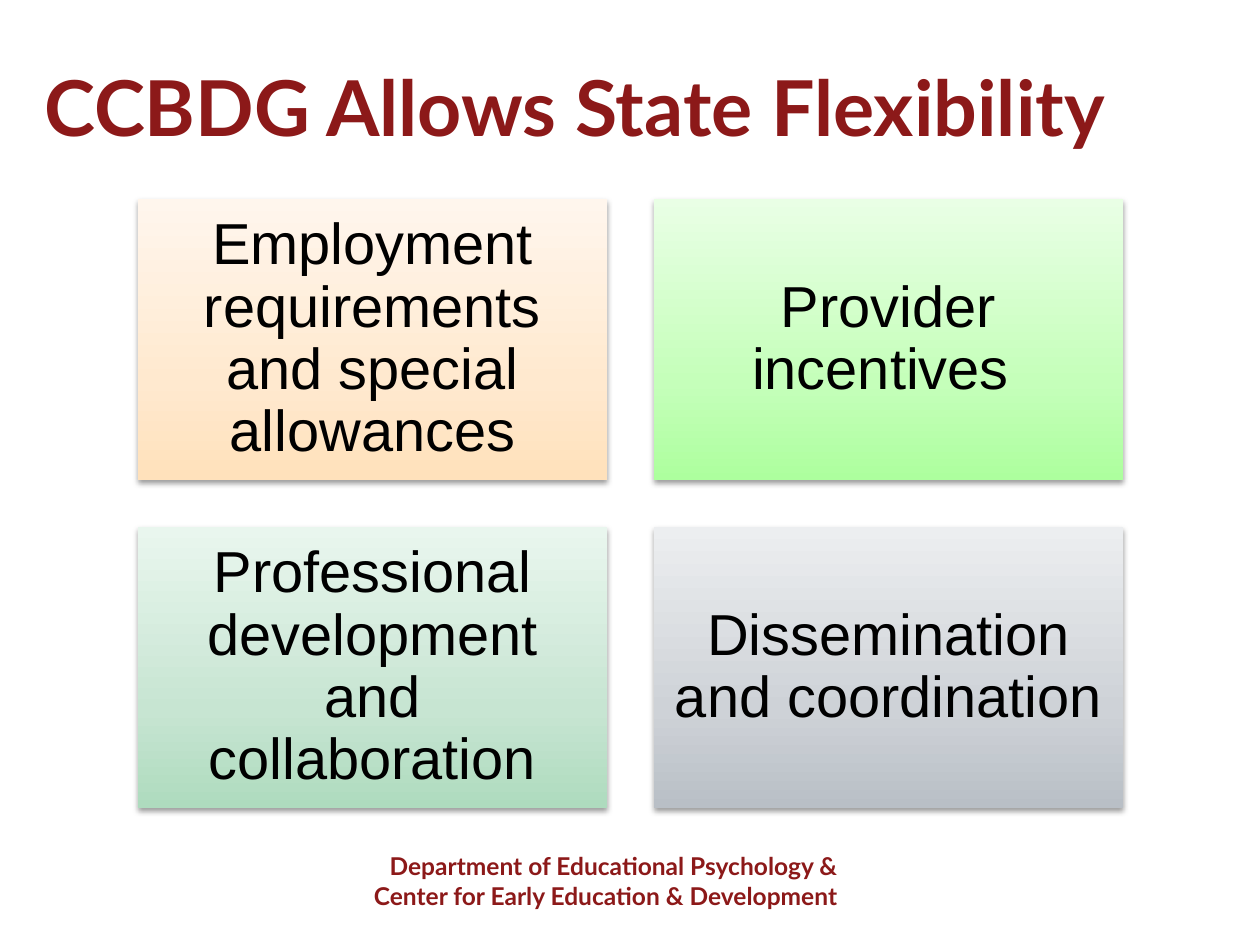
from dataclasses import dataclass

from lxml import etree
from pptx import Presentation
from pptx import util as u
from pptx.dml.color import RGBColor
from pptx.enum import shapes, text
from pptx.oxml import ns


@dataclass(frozen=True)
class Theme:
    """Colours, fonts and type sizes of the slide."""
    accent: str = "8C1919"
    ink: str = "000000"
    heading_font: str = "Lato"
    card_font: str = "Arial"
    title_size: int = 44
    card_size: int = 33
    footer_size: int = 14
    stops: tuple = (0, 35, 100)
    peach: tuple = ("FFE1BB", "FFE9CF", "FFF6ED")
    lime: tuple = ("ADFF9E", "C5FFBA", "E9FFE5")
    green: tuple = ("AEDBBE", "C7E5D2", "E9F6EE")
    grey: tuple = ("B9BFC6", "CED2D7", "ECEEF0")


THEME = Theme()
CARDS = (
    ("Employment requirements and special allowances", THEME.peach),
    ("Provider incentives ", THEME.lime),
    ("Professional development and collaboration", THEME.green),
    ("Dissemination and coordination", THEME.grey),
)


def px(length):
    """Turn pixels into EMU."""
    return u.Inches(length / 126)


def style(para, font, size, color, bold=False):
    """Format every run of a paragraph."""
    for span in para.runs:
        span.font.name = font
        span.font.size = u.Pt(size)
        span.font.bold = bold
        span.font.color.rgb = RGBColor.from_string(color)


def add_color(parent, tag, color, **attributes):
    """Append an element that holds one colour and return the colour."""
    holder = etree.SubElement(parent, ns.qn(tag), **attributes)
    return etree.SubElement(holder, ns.qn("a:srgbClr"), val=color)


def fill_gradient(shape, colors):
    """Fill a shape with a gradient that rises from bottom to top."""
    shape.fill.gradient()
    shape.fill.gradient_angle = 90
    stop_list = shape._element.spPr.find(".//" + ns.qn("a:gsLst"))
    for stop in list(stop_list):
        stop_list.remove(stop)
    for position, color in zip(THEME.stops, colors):
        add_color(stop_list, "a:gs", color, pos=str(position * 1000))


def add_shadow(shape):
    """Give a shape a soft shadow below it."""
    shape.shadow.inherit = False
    effects = shape._element.spPr.find(ns.qn("a:effectLst"))
    color = add_color(effects, "a:outerShdw", THEME.ink, blurRad="40000",
                      dist="20000", dir="5400000", rotWithShape="0")
    etree.SubElement(color, ns.qn("a:alpha"), val="38000")


def add_heading(page, left, top, width, height):
    """Place the slide title."""
    box = page.shapes.add_textbox(px(left), px(top), px(width), px(height))
    frame = box.text_frame
    frame.word_wrap = True
    frame.vertical_anchor = text.MSO_ANCHOR.MIDDLE
    frame.text = "CCBDG Allows State Flexibility"
    style(frame.paragraphs[0], THEME.heading_font, THEME.title_size, THEME.accent, True)


def add_card(page, left, top, width, height, label, colors):
    """Place one gradient card with its label."""
    card = page.shapes.add_shape(shapes.MSO_SHAPE.RECTANGLE,
                                 px(left), px(top), px(width), px(height))
    fill_gradient(card, colors)
    card.line.fill.background()
    add_shadow(card)
    frame = card.text_frame
    frame.word_wrap = True
    frame.vertical_anchor = text.MSO_ANCHOR.MIDDLE
    frame.margin_left = frame.margin_right = px(18)
    frame.margin_top = frame.margin_bottom = px(18)
    frame.text = label
    para = frame.paragraphs[0]
    para.alignment = text.PP_ALIGN.CENTER
    para.line_spacing = 0.9
    style(para, THEME.card_font, THEME.card_size, THEME.ink)


def add_card_grid(page, left, top, width, height, gap=47, columns=2):
    """Place the cards in equal columns and rows."""
    rows = len(CARDS) // columns
    card_width = (width - gap * (columns - 1)) // columns
    card_height = (height - gap * (rows - 1)) // rows
    for index, (label, colors) in enumerate(CARDS):
        row, column = divmod(index, columns)
        add_card(page, left + column * (card_width + gap),
                 top + row * (card_height + gap),
                 card_width, card_height, label, colors)


def add_footer(page, left, top, width, height):
    """Place the department lines at the foot of the slide."""
    box = page.shapes.add_textbox(px(left), px(top), px(width), px(height))
    frame = box.text_frame
    frame.word_wrap = True
    frame.auto_size = text.MSO_AUTO_SIZE.SHAPE_TO_FIT_TEXT
    frame.text = ("Department of Educational Psychology &\n"
                  "Center for Early Education & Development")
    for para in frame.paragraphs:
        para.alignment = text.PP_ALIGN.RIGHT
        style(para, THEME.heading_font, THEME.footer_size, THEME.accent, True)


def main():
    """Build the slide and save it."""
    deck = Presentation()
    deck.slide_width, deck.slide_height = px(1260), px(945)
    page = deck.slides.add_slide(deck.slide_layouts[6])
    add_footer(page, 220, 845, 630, 72)
    add_heading(page, 32, 53, 1197, 105)
    add_card_grid(page, 138, 199, 985, 609)
    deck.save("out.pptx")


if __name__ == "__main__":
    main()
